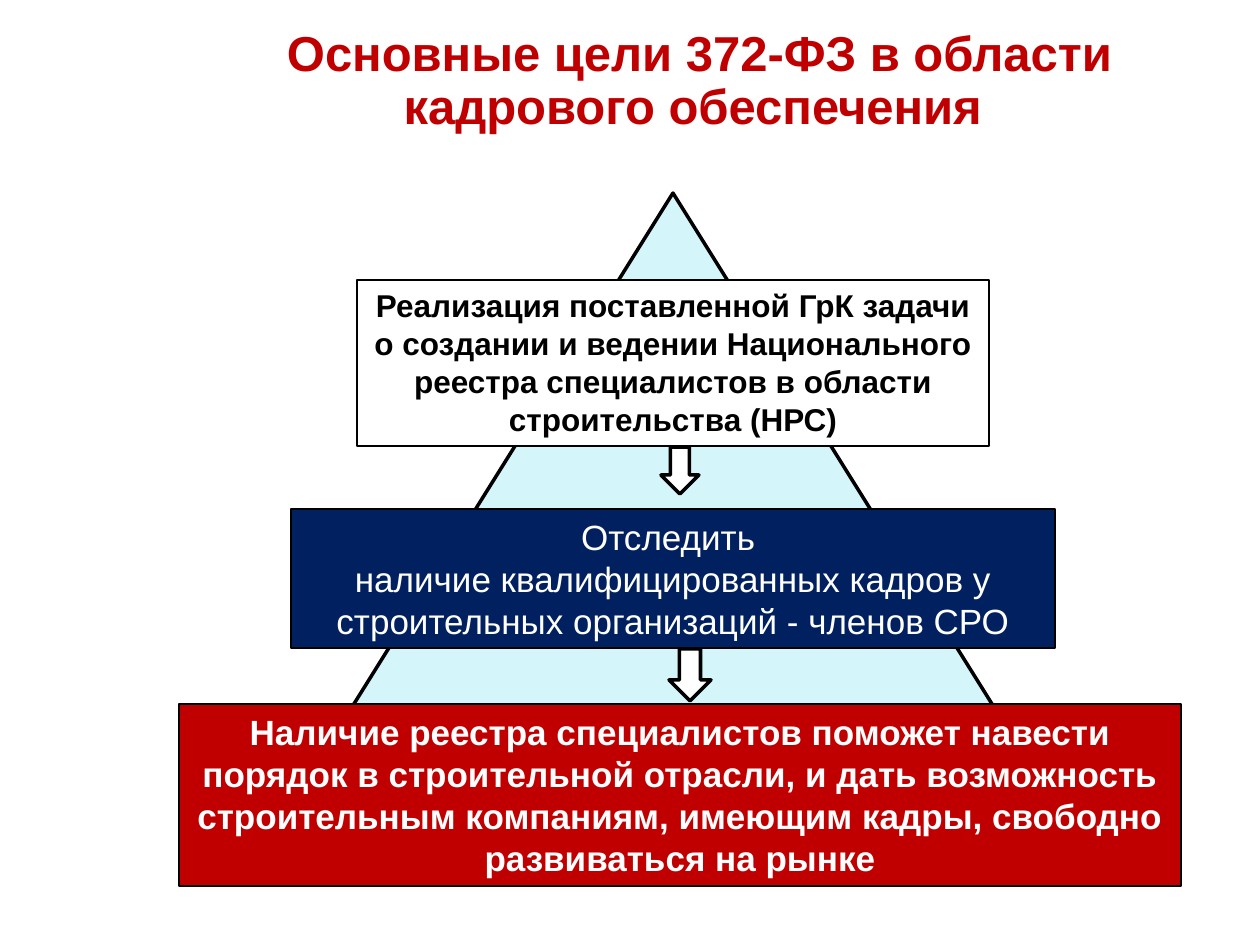
"""Build the slide on the staffing goals of law 372-ФЗ."""
from pptx import Presentation, util as u
from pptx.dml.color import RGBColor
from pptx.enum import shapes, text

SCALE = 914400 / 126
RED = RGBColor(0xC0, 0x00, 0x00)
NAVY = RGBColor(0x00, 0x20, 0x60)
AQUA = RGBColor(0xD4, 0xF5, 0xFA)
WHITE = RGBColor(0xFF, 0xFF, 0xFF)
BLACK = RGBColor(0x00, 0x00, 0x00)
KIND = shapes.MSO_SHAPE

TITLE = "Основные цели 372-ФЗ в области кадрового обеспечения "
GOALS = [
    ((291, 509, 764, 139), NAVY, WHITE, 20, False, text.MSO_ANCHOR.MIDDLE,
     "Отследить \nналичие квалифицированных кадров у "
     "строительных организаций - членов СРО"),
    ((179, 704, 1002, 182), RED, WHITE, 20, True, text.MSO_ANCHOR.TOP,
     "Наличие реестра специалистов поможет навести порядок в строительной "
     "отрасли, и дать возможность строительным компаниям, имеющим кадры, "
     "свободно развиваться на рынке"),
    ((357, 280, 632, 166), WHITE, BLACK, 18, True, text.MSO_ANCHOR.TOP,
     "Реализация поставленной ГрК задачи о создании и ведении Национального "
     "реестра специалистов в области строительства (НРС)"),
]
ARROWS = [(669, 649, 42, 52), (661, 447, 38, 47)]


def px(num):
    """Turn pixels into EMU."""
    return u.Emu(round(num * SCALE))


def style(frame, size, color, bold):
    """Centre the paragraphs and format their runs."""
    for para in frame.paragraphs:
        para.alignment = text.PP_ALIGN.CENTER
        for run in para.runs:
            font = run.font
            font.name, font.size, font.bold = "Arial", u.Pt(size), bold
            font.color.rgb = color


def add_form(slide, kind, box, fill, width):
    """Add a filled preset shape with a black line."""
    form = slide.shapes.add_shape(kind, *map(px, box))
    form.shadow.inherit = False
    form.fill.solid()
    form.fill.fore_color.rgb = fill
    form.line.color.rgb = BLACK
    form.line.width = u.Pt(width)
    return form


def add_goal(slide, box, fill, color, size, bold, anchor, words):
    """Add one goal as a box of text."""
    frame = add_form(slide, KIND.RECTANGLE, box, fill, 0.75).text_frame
    frame.text = words
    frame.word_wrap = True
    frame.auto_size = text.MSO_AUTO_SIZE.SHAPE_TO_FIT_TEXT
    frame.vertical_anchor = anchor
    style(frame, size, color, bold)


def set_title(slide):
    """Place and format the title."""
    title = slide.shapes.title
    title.left, title.top, title.width, title.height = map(px, (195, 96, 1009, 44))
    frame = title.text_frame
    frame.text = TITLE
    frame.word_wrap = True
    frame.auto_size = text.MSO_AUTO_SIZE.NONE
    frame.vertical_anchor = text.MSO_ANCHOR.BOTTOM
    frame.margin_left = frame.margin_right = px(9)
    frame.margin_top = frame.margin_bottom = px(5)
    frame.paragraphs[0].line_spacing = 0.9
    style(frame, 28, RED, True)


def main():
    """Build and save the slide."""
    deck = Presentation()
    deck.slide_width, deck.slide_height = px(1260), px(945)
    slide = deck.slides.add_slide(deck.slide_layouts[5])
    set_title(slide)
    add_form(slide, KIND.ISOSCELES_TRIANGLE, (244, 193, 858, 687), AQUA, 2)
    for goal in GOALS:
        add_goal(slide, *goal)
    for box in ARROWS:
        add_form(slide, KIND.DOWN_ARROW, box, WHITE, 2)
    deck.save("out.pptx")


if __name__ == "__main__":
    main()
